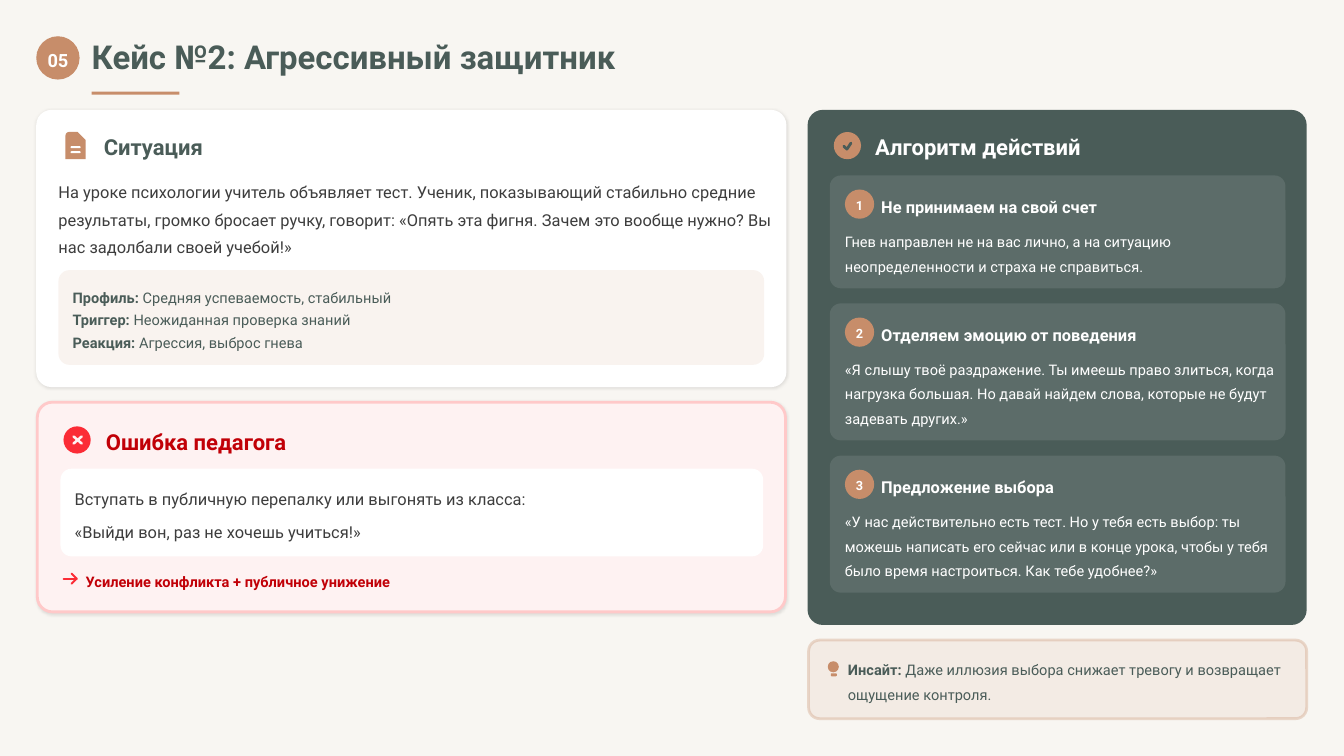
from itertools import pairwise

from lxml import etree
from pptx import Presentation
from pptx.dml.color import RGBColor
from pptx.enum.shapes import MSO_CONNECTOR, MSO_SHAPE
from pptx.enum.text import MSO_ANCHOR, PP_ALIGN
from pptx.oxml.ns import qn
from pptx.util import Inches, Pt

ROUNDED = MSO_SHAPE.ROUNDED_RECTANGLE
RECTANGLE = MSO_SHAPE.RECTANGLE
OVAL = MSO_SHAPE.OVAL
PAGE = MSO_SHAPE.SNIP_ROUND_RECTANGLE
STRAIGHT = MSO_CONNECTOR.STRAIGHT
MIDDLE = MSO_ANCHOR.MIDDLE
LEFT, CENTER = PP_ALIGN.LEFT, PP_ALIGN.CENTER

FONT = "Roboto"
COLORS = {
    "background": "F8F6F2",
    "accent": "C78D6A",
    "green": "4A5C58",
    "white": "FFFFFF",
    "body": "3D3D3D",
    "red": "FB2C36",
    "dark_red": "C10007",
    "pink": "FEF2F2",
    "pink_border": "FFC9C9",
    "shadow": "000000",
}
TITLE_SIZE, HEADING_SIZE, BODY_SIZE, SMALL_SIZE = 23.5, 15.7, 11.7, 10.4
STEP_GAP = 0.15

PROFILE = [
    [("Профиль:", True), (" Средняя успеваемость, стабильный", False)],
    [("Триггер:", True), (" Неожиданная проверка знаний", False)],
    [("Реакция:", True), (" Агрессия, выброс гнева", False)],
]
SITUATION = (
    "На уроке психологии учитель объявляет тест. Ученик, показывающий стабильно "
    "средние результаты, громко бросает ручку, говорит: «Опять эта фигня. Зачем "
    "это вообще нужно? Вы нас задолбали своей учебой!»"
)
MISTAKE = [
    [("Вступать в публичную перепалку или выгонять из класса:", False)],
    [("«Выйди вон, раз не хочешь учиться!»", False)],
]
INSIGHT = [
    ("Инсайт:", True),
    (" Даже иллюзия выбора снижает тревогу и возвращает ощущение контроля.", False),
]
STEPS = [
    (1.12, "Не принимаем на свой счет",
     "Гнев направлен не на вас лично, а на ситуацию неопределенности и страха "
     "не справиться."),
    (1.36, "Отделяем эмоцию от поведения",
     "«Я слышу твоё раздражение. Ты имеешь право злиться, когда нагрузка большая. "
     "Но давай найдем слова, которые не будут задевать других.»"),
    (1.36, "Предложение выбора",
     "«У нас действительно есть тест. Но у тебя есть выбор: ты можешь написать его "
     "сейчас или в конце урока, чтобы у тебя было время настроиться. Как тебе "
     "удобнее?»"),
]


def rgb(color):
    return RGBColor.from_string(COLORS[color])


def set_opacity(color_format_fill, percent):
    color = color_format_fill._xPr.find(".//" + qn("a:srgbClr"))
    etree.SubElement(color, qn("a:alpha"), val=str(percent * 1000))


def add_figure(slide, kind, left, top, width, height, color, opacity=100):
    shape = slide.shapes.add_shape(
        kind, Inches(left), Inches(top), Inches(width), Inches(height))
    shape.shadow.inherit = False
    shape.fill.solid()
    shape.fill.fore_color.rgb = rgb(color)
    if opacity < 100:
        set_opacity(shape.fill, opacity)
    shape.line.fill.background()
    return shape


def add_panel(slide, left, top, width, height, color, radius=0.11, opacity=100):
    panel = add_figure(slide, ROUNDED, left, top, width, height, color, opacity)
    panel.adjustments[0] = radius / min(width, height)
    return panel


def set_border(panel, color, opacity=100):
    panel.line.color.rgb = rgb(color)
    panel.line.width = Pt(2)
    if opacity < 100:
        set_opacity(panel.line.fill, opacity)


def add_soft_shadow(panel):
    effects = panel._element.spPr.find(qn("a:effectLst"))
    shadow = etree.SubElement(
        effects, qn("a:outerShdw"), blurRad=str(Pt(2)), dist=str(Pt(0.7)),
        dir="5400000", algn="ctr", rotWithShape="0")
    color = etree.SubElement(shadow, qn("a:srgbClr"), val=COLORS["shadow"])
    etree.SubElement(color, qn("a:alpha"), val="10000")


def add_rich_text(slide, left, top, width, height, paragraphs, size, color,
                  spacing, align=LEFT, space_before=0):
    """Each paragraph is a list of (text, bold) pairs."""
    box = slide.shapes.add_textbox(
        Inches(left), Inches(top), Inches(width), Inches(height))
    frame = box.text_frame
    frame.word_wrap = True
    frame.vertical_anchor = MIDDLE
    frame.margin_left = frame.margin_right = 0
    frame.margin_top = frame.margin_bottom = 0
    for index, parts in enumerate(paragraphs):
        paragraph = frame.add_paragraph() if index else frame.paragraphs[0]
        paragraph.alignment = align
        paragraph.line_spacing = spacing
        if index and space_before:
            paragraph.space_before = Pt(space_before)
        for text, bold in parts:
            run = paragraph.add_run()
            run.text = text
            run.font.name = FONT
            run.font.size = Pt(size)
            run.font.bold = bold
            run.font.color.rgb = rgb(color)


def add_text(slide, left, top, width, height, text, size, color, spacing,
             bold=False, align=LEFT):
    add_rich_text(slide, left, top, width, height, [[(text, bold)]], size, color,
                  spacing, align)


def add_heading(slide, left, top, text, color):
    add_text(slide, left, top, 3, 0.29, text, HEADING_SIZE, color, 1.1, True)


def add_badge(slide, left, top, diameter, text, size):
    add_figure(slide, OVAL, left, top, diameter, diameter, "accent")
    add_text(slide, left, top, diameter, diameter, text, size, "white", 1.2,
             True, CENTER)


def add_stroke(slide, points, color, width):
    """Draw a polyline through the points, given in inches."""
    for start, end in pairwise(points):
        line = slide.shapes.add_connector(
            STRAIGHT, *(Inches(value) for value in start + end))
        line.line.color.rgb = rgb(color)
        line.line.width = Pt(width)
        line.line._get_or_add_ln().set("cap", "rnd")
        etree.SubElement(line._element.spPr, qn("a:effectLst"))


def add_title(slide):
    add_badge(slide, 0.36, 0.36, 0.43, "05", 13)
    add_text(slide, 0.91, 0.4, 7, 0.36, "Кейс №2: Агрессивный защитник",
             TITLE_SIZE, "green", 0.9, True)
    add_figure(slide, RECTANGLE, 0.91, 0.91, 0.87, 0.03, "accent")


def add_situation(slide):
    add_soft_shadow(add_panel(slide, 0.36, 1.09, 7.44, 2.75, "white", 0.15))
    add_figure(slide, PAGE, 0.65, 1.31, 0.2, 0.27, "accent").adjustments[1] = 0.4
    for top in (1.45, 1.5):
        add_panel(slide, 0.7, top, 0.1, 0.02, "white", 0.01)
    add_heading(slide, 1.03, 1.3, "Ситуация", "green")
    add_text(slide, 0.58, 1.74, 7.1, 0.8, SITUATION, BODY_SIZE, "body", 1.4)
    add_panel(slide, 0.58, 2.68, 7, 0.94, "accent", opacity=10)
    add_rich_text(slide, 0.72, 2.82, 6.78, 0.66, PROFILE, SMALL_SIZE, "green", 1.3)


def add_mistake(slide):
    panel = add_panel(slide, 0.37, 3.99, 7.42, 2.08, "pink", 0.15)
    set_border(panel, "pink_border")
    add_soft_shadow(panel)
    add_figure(slide, OVAL, 0.63, 4.23, 0.27, 0.27, "red")
    add_stroke(slide, [(0.73, 4.33), (0.81, 4.4)], "pink", 1.8)
    add_stroke(slide, [(0.73, 4.4), (0.81, 4.33)], "pink", 1.8)
    add_heading(slide, 1.05, 4.22, "Ошибка педагога", "dark_red")
    add_panel(slide, 0.6, 4.65, 6.97, 0.87, "white")
    add_rich_text(slide, 0.74, 4.8, 6.76, 0.57, MISTAKE, BODY_SIZE, "body", 1.3,
                  space_before=5.4)
    add_stroke(slide, [(0.63, 5.74), (0.76, 5.74)], "red", 1.4)
    add_stroke(slide, [(0.71, 5.69), (0.76, 5.74), (0.71, 5.79)], "red", 1.4)
    add_text(slide, 0.85, 5.63, 5, 0.22, "Усиление конфликта + публичное унижение",
             SMALL_SIZE, "dark_red", 1.3, True)


def add_algorithm(slide):
    add_panel(slide, 8.01, 1.09, 4.95, 5.11, "green", 0.15)
    add_figure(slide, OVAL, 8.27, 1.31, 0.27, 0.27, "accent")
    add_stroke(slide, [(8.37, 1.45), (8.4, 1.48), (8.44, 1.42)], "green", 2)
    add_heading(slide, 8.68, 1.3, "Алгоритм действий", "white")
    top = 1.74
    for number, (height, heading, advice) in enumerate(STEPS, 1):
        add_panel(slide, 8.23, top, 4.52, height, "white", opacity=10)
        add_badge(slide, 8.38, top + 0.14, 0.29, str(number), 9.1)
        add_text(slide, 8.74, top + 0.16, 3.8, 0.25, heading, BODY_SIZE, "white",
                 1.3, True)
        add_text(slide, 8.38, top + 0.51, 4.3, height - 0.65, advice, SMALL_SIZE,
                 "white", 1.4)
        top += height + STEP_GAP


def add_insight(slide):
    panel = add_panel(slide, 8.02, 6.35, 4.94, 0.78, "accent", opacity=10)
    set_border(panel, "accent", 30)
    add_figure(slide, OVAL, 8.21, 6.56, 0.11, 0.11, "accent")
    add_panel(slide, 8.24, 6.68, 0.06, 0.03, "accent", 0.01)
    add_rich_text(slide, 8.41, 6.5, 4.47, 0.47, [INSIGHT], SMALL_SIZE, "green", 1.4)


def main():
    presentation = Presentation()
    presentation.slide_width = Inches(13.33)
    presentation.slide_height = Inches(7.5)
    slide = presentation.slides.add_slide(presentation.slide_layouts[6])
    slide.background.fill.solid()
    slide.background.fill.fore_color.rgb = rgb("background")
    add_title(slide)
    add_situation(slide)
    add_mistake(slide)
    add_algorithm(slide)
    add_insight(slide)
    presentation.save("out.pptx")


if __name__ == "__main__":
    main()
